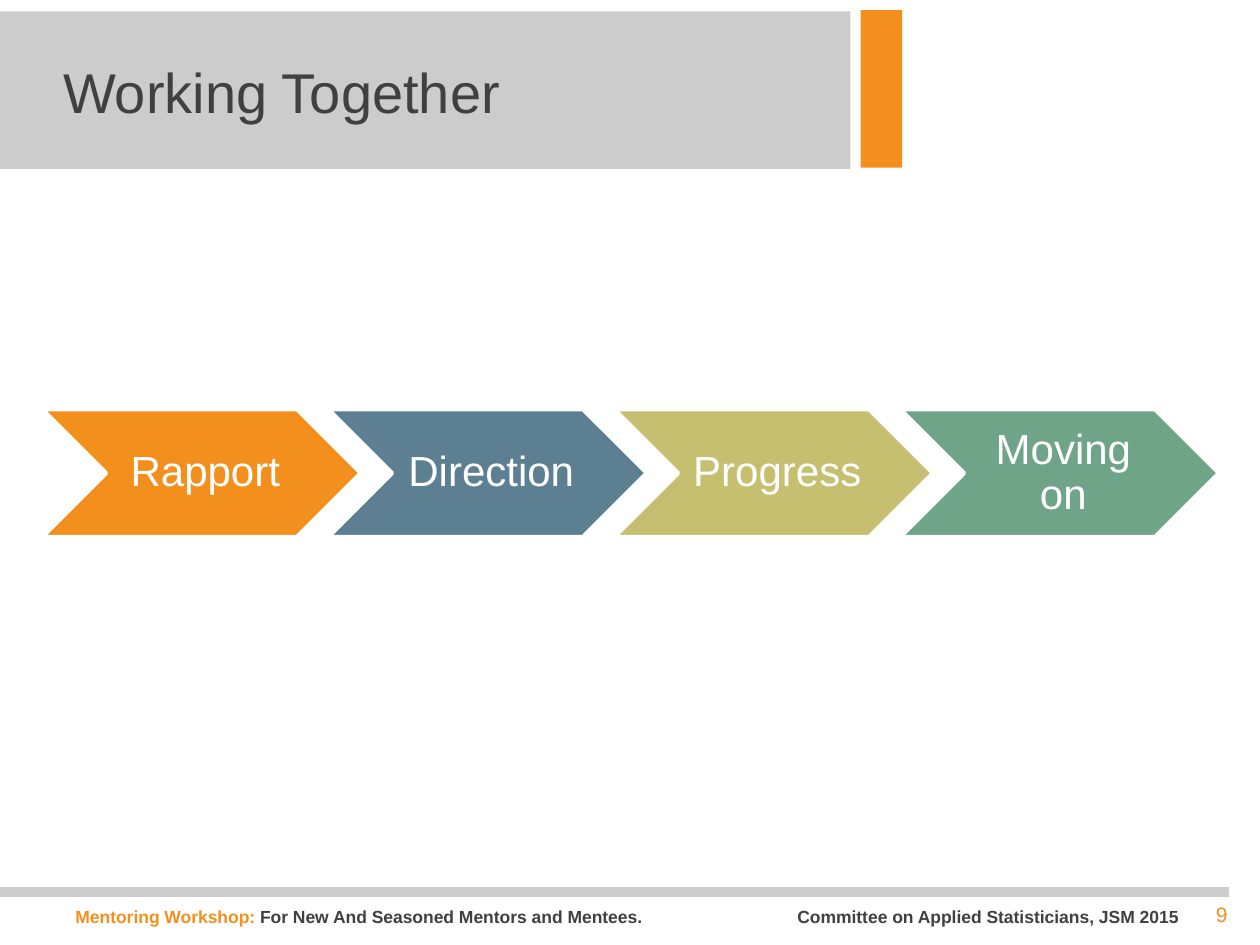
from pptx import Presentation
from pptx.dml.color import RGBColor
from pptx.enum.shapes import MSO_CONNECTOR, MSO_SHAPE
from pptx.enum.text import MSO_ANCHOR, MSO_AUTO_SIZE, PP_ALIGN
from pptx.util import Inches, Pt
from lxml import etree

LINE = MSO_CONNECTOR.STRAIGHT
RECT, CHEVRON = MSO_SHAPE.RECTANGLE, MSO_SHAPE.CHEVRON
MIDDLE, TOP = MSO_ANCHOR.MIDDLE, MSO_ANCHOR.TOP
LEFT, CENTER, RIGHT = PP_ALIGN.LEFT, PP_ALIGN.CENTER, PP_ALIGN.RIGHT
FIXED = MSO_AUTO_SIZE.NONE
NS = "http://schemas.openxmlformats.org/drawingml/2006/main"

THEME = {
    "font": "Arial",
    "orange": "F3901D", "grey": "CCCCCC", "dark": "404040", "white": "FFFFFF",
    "title": 32, "step": 24, "page": 12, "foot": 10,
}
TITLE = "Working Together"
STEPS = [
    ("Rapport", "F3901D"),
    ("Direction", "5C7F92"),
    ("Progress", "C6BF70"),
    ("Moving on", "70A489"),
]
FOOT = [
    ("Mentoring Workshop: ", "orange"),
    ("For New And Seasoned Mentors and Mentees.\tCommittee on Applied Statisticians, JSM 2015", "dark"),
]
PAGE = "9"
STEP_X, STEP_Y, STEP_W, STEP_H, PITCH = 0.34, 3.25, 2.52, 1.01, 2.27
FOOT_TAB = 5.73


def rgb(name):
    return RGBColor.from_string(THEME.get(name, name))


def place(shape, *box):
    shape.left, shape.top, shape.width, shape.height = map(Inches, box)


def frame(shape, pads, anchor=TOP, wrap=True):
    text = shape.text_frame
    text.auto_size, text.word_wrap, text.vertical_anchor = FIXED, wrap, anchor
    text.margin_left, text.margin_top, text.margin_right, text.margin_bottom = map(Inches, pads)
    return text


def style(run, size, color, bold=False):
    font = run.font
    font.name, font.size, font.bold = THEME["font"], Pt(THEME[size]), bold
    font.color.rgb = rgb(color)


def write(text, words, size, color, align):
    text.text = words
    para = text.paragraphs[0]
    para.alignment = align
    style(para.runs[0], size, color)
    return para


def fill(shape, color):
    shape.fill.solid()
    shape.fill.fore_color.rgb = rgb(color)


def block(slide, kind, box, color):
    shape = slide.shapes.add_shape(kind, *map(Inches, box))
    shape.shadow.inherit = False
    fill(shape, color)
    shape.line.fill.background()
    return shape


def add_head(slide):
    block(slide, RECT, (6.83, 0.08, 0.33, 1.25), "orange")
    title = slide.shapes.title
    place(title, 0, 0.09, 6.75, 1.25)
    fill(title, "grey")
    text = frame(title, (0.5, 0.1, 0.1, 0.05), MIDDLE)
    write(text, TITLE, "title", "dark", LEFT).line_spacing = Pt(36)


def add_steps(slide):
    for i, (name, color) in enumerate(STEPS):
        box = (STEP_X + i * PITCH, STEP_Y, STEP_W, STEP_H)
        step = block(slide, CHEVRON, box, color)
        step.line.color.rgb = rgb("white")
        step.line.width = Pt(2)
        text = frame(step, (0.1, 0.04, 0.04, 0.04), MIDDLE)
        write(text, name, "step", "white", CENTER).line_spacing = 0.9


def add_foot(slide):
    rule = slide.shapes.add_connector(LINE, 0, Inches(7.08), Inches(9.75), Inches(7.08))
    rule.line.color.rgb = rgb("grey")
    rule.line.width = Pt(6)
    etree.SubElement(rule._element.spPr, f"{{{NS}}}effectLst")

    page = slide.shapes.add_textbox(*map(Inches, (7.92, 7.11, 1.92, 0.3)))
    write(frame(page, (0.1, 0.05, 0.1, 0.05)), PAGE, "page", "orange", RIGHT)

    note = slide.shapes.add_textbox(*map(Inches, (0.5, 7.19, 8.95, 0.3)))
    para = frame(note, (0.1, 0, 0.1, 0.05), wrap=False).paragraphs[0]
    para.alignment = LEFT
    tabs = etree.SubElement(para._p.get_or_add_pPr(), f"{{{NS}}}tabLst")
    etree.SubElement(tabs, f"{{{NS}}}tab", pos=str(Inches(FOOT_TAB)), algn="l")
    for words, color in FOOT:
        run = para.add_run()
        run.text = words
        style(run, "foot", color, True)


def main():
    deck = Presentation()
    deck.slide_width, deck.slide_height = Inches(10), Inches(7.5)
    slide = deck.slides.add_slide(deck.slide_layouts[5])
    add_head(slide)
    add_steps(slide)
    add_foot(slide)
    deck.save("out.pptx")


if __name__ == "__main__":
    main()
